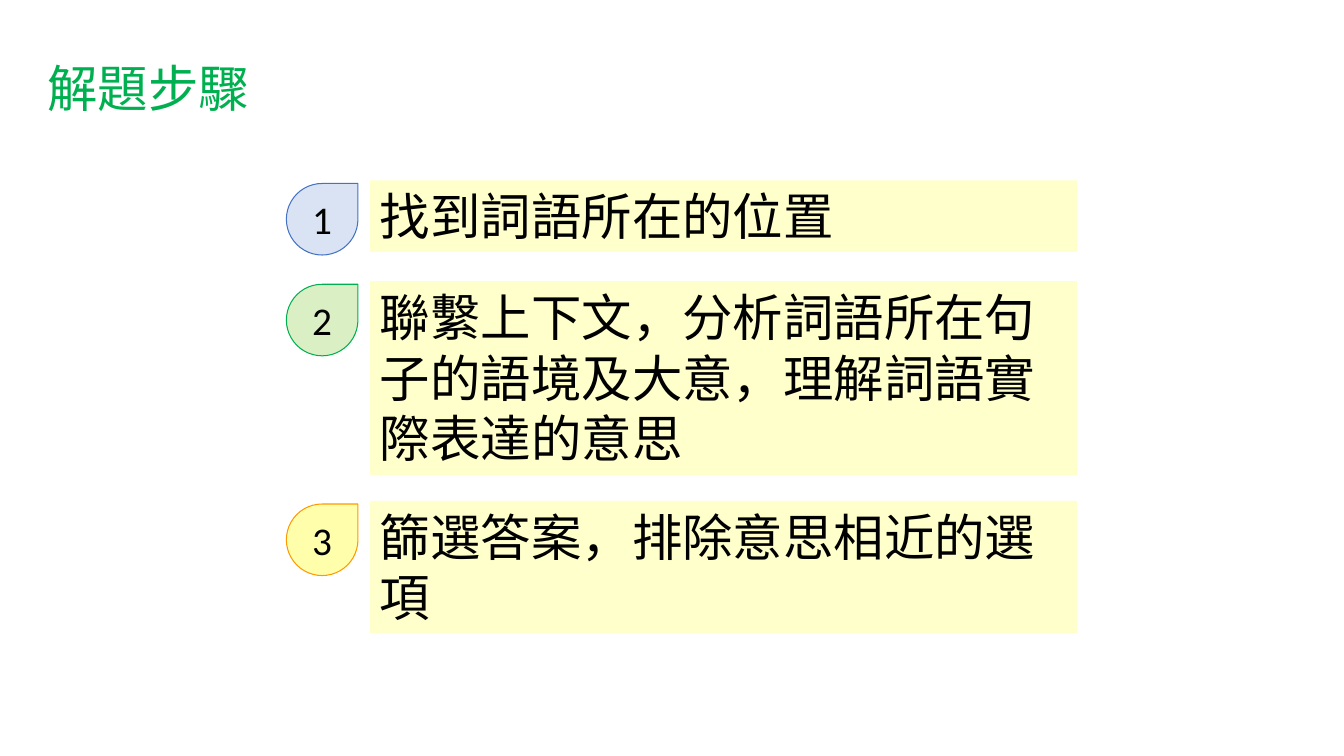
from dataclasses import dataclass

from lxml.etree import SubElement
from pptx import Presentation
from pptx.dml.color import RGBColor
from pptx.enum.shapes import MSO_SHAPE
from pptx.enum.text import MSO_ANCHOR, MSO_AUTO_SIZE, PP_ALIGN
from pptx.oxml.ns import qn
from pptx.util import Inches, Pt


@dataclass(frozen=True)
class Theme:
    ink: str = "000000"
    title: str = "00B050"
    panel: str = "FFFFCC"
    large: int = 36
    number: int = 28
    alpha: int = 33000


THEME = Theme()
STEPS = [
    (1.79, 0.71, "找到詞語所在的位置", "8FAADC", "4472C4"),
    (2.79, 1.92, "聯繫上下文，分析詞語所在句子的語境及大意，理解詞語實際表達的意思",
     "92D050", "00B050"),
    (4.97, 1.31, "篩選答案，排除意思相近的選項", "FFFF00", "FF9900"),
]


def write(shape, text, size=THEME.large, font="Arial", color=THEME.ink,
          align=PP_ALIGN.LEFT, anchor=MSO_ANCHOR.TOP, wrap=True, grow=True):
    frame = shape.text_frame
    frame.word_wrap = wrap
    frame.vertical_anchor = anchor
    frame.auto_size = (MSO_AUTO_SIZE.SHAPE_TO_FIT_TEXT if grow
                       else MSO_AUTO_SIZE.NONE)
    para = frame.paragraphs[0]
    para.alignment = align
    run = para.add_run()
    run.text = text
    run.font.size = Pt(size)
    run.font.name = font
    run.font.color.rgb = RGBColor.from_string(color)


def block(slide, kind, left, top, width, height, fill):
    shape = slide.shapes.add_shape(
        kind, Inches(left), Inches(top), Inches(width), Inches(height))
    shape.shadow.inherit = False
    shape.fill.solid()
    shape.fill.fore_color.rgb = RGBColor.from_string(fill)
    shape.line.fill.background()
    return shape


def title(slide, text):
    box = slide.shapes.add_textbox(
        Inches(0.37), Inches(0.52), Inches(2.22), Inches(0.71))
    write(box, text, font="Noto Sans CJK SC", color=THEME.title, wrap=False)


def panel(slide, top, height, text):
    shape = block(slide, MSO_SHAPE.RECTANGLE, 3.67, top, 7.01, height,
                  THEME.panel)
    write(shape, text)


def badge(slide, top, number, fill, edge):
    shape = block(slide, MSO_SHAPE.TEAR, 2.84, top, 0.71, 0.71, fill)
    color = shape.fill._xPr.find(qn("a:solidFill"))[0]
    SubElement(color, qn("a:alpha"), val=str(THEME.alpha))
    shape.line.color.rgb = RGBColor.from_string(edge)
    shape.line.width = Pt(0.75)
    write(shape, str(number), size=THEME.number, font="Calibri",
          align=PP_ALIGN.CENTER, anchor=MSO_ANCHOR.MIDDLE, grow=False)


def main():
    deck = Presentation()
    deck.slide_width = Inches(13.33)
    deck.slide_height = Inches(7.5)
    slide = deck.slides.add_slide(deck.slide_layouts[6])
    title(slide, "解題步驟")
    for number, (top, height, text, fill, edge) in enumerate(STEPS, 1):
        panel(slide, top, height, text)
        badge(slide, top + 0.03, number, fill, edge)
    deck.save("out.pptx")


if __name__ == "__main__":
    main()
